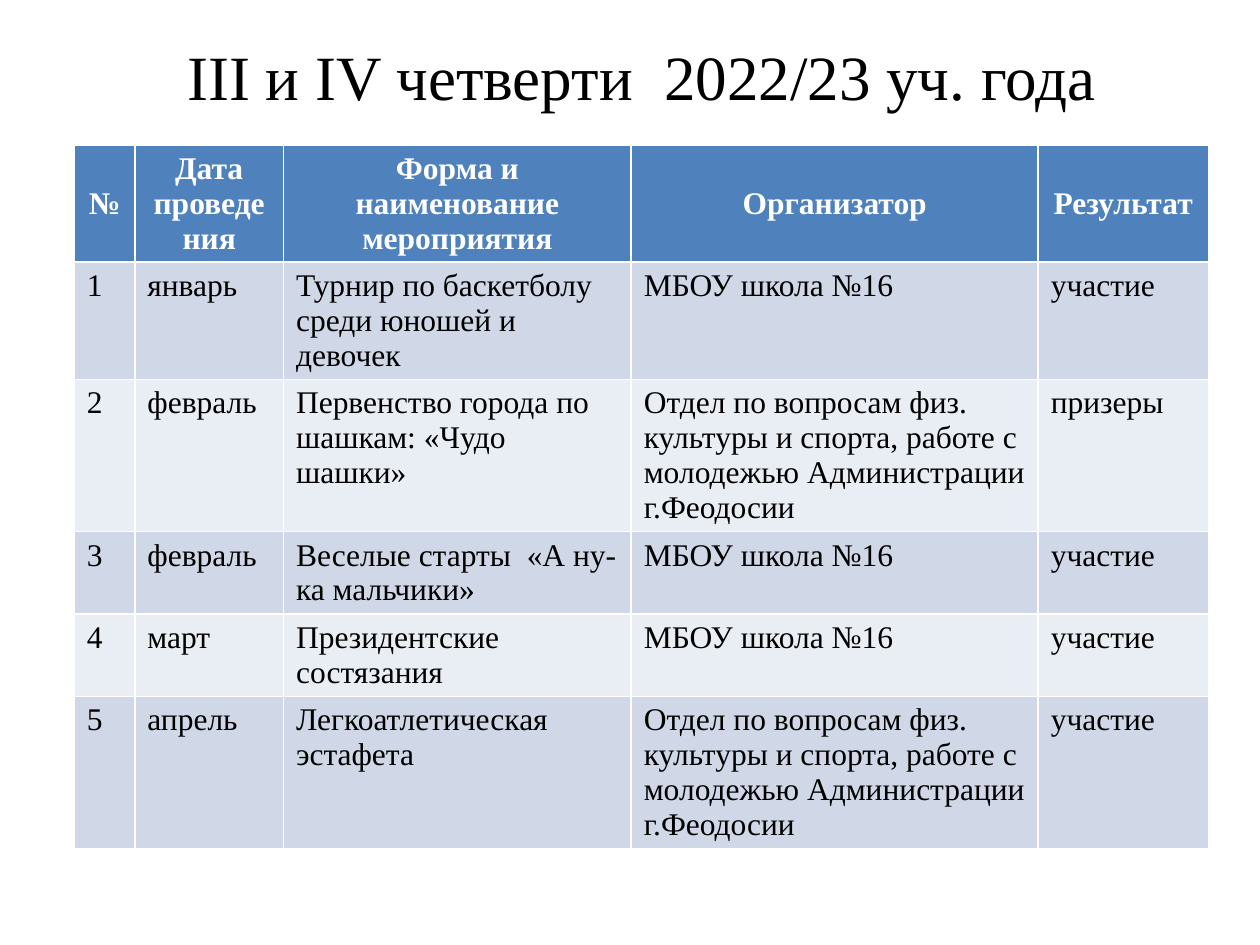
from pptx import Presentation
from pptx.dml.color import RGBColor
from pptx.enum import text
from pptx.util import Inches, Pt

FONT = "Times New Roman"
HUES = {"head": "4F81BD", "odd": "D0D8E8", "even": "E9EDF4",
        "ink": "000000", "light": "FFFFFF"}
COLS = [0.48, 1.18, 2.76, 3.23, 1.35]
ROW = 0.41

SCHOOL = "МБОУ школа №16"
DEPT = ("Отдел по вопросам физ. культуры и спорта, "
        "работе с молодежью Администрации г.Феодосии")
HEAD = ["№", "Дата проведения", "Форма и наименование мероприятия",
        "Организатор", "Результат"]
EVENTS = [
    ("январь", "Турнир по баскетболу среди юношей и девочек", SCHOOL, "участие"),
    ("февраль", "Первенство города по шашкам: «Чудо шашки»", DEPT, "призеры"),
    ("февраль", "Веселые старты  «А ну- ка мальчики»", SCHOOL, "участие"),
    ("март", "Президентские состязания", SCHOOL, "участие"),
    ("апрель", "Легкоатлетическая эстафета", DEPT, "участие"),
]


def color(name):
    return RGBColor.from_string(HUES[name])


def style(par, size, hue, bold=False, align=None):
    par.alignment = align
    for run in par.runs:
        font = run.font
        font.name, font.size, font.bold = FONT, Pt(size), bold
        font.color.rgb = color(hue)


def add_title(slide, left, top, width, height):
    title = slide.shapes.title
    title.left, title.top = Inches(left), Inches(top)
    title.width, title.height = Inches(width), Inches(height)
    frame = title.text_frame
    frame.text = "III и IV четверти  2022/23 уч. года"
    frame.vertical_anchor = text.MSO_ANCHOR.MIDDLE
    style(frame.paragraphs[0], 36, "ink", align=text.PP_ALIGN.CENTER)


def fill_cell(cell, words, head, band):
    cell.text_frame.text = words
    cell.fill.solid()
    cell.fill.fore_color.rgb = color(band)
    par = cell.text_frame.paragraphs[0]
    if head:
        cell.vertical_anchor = text.MSO_ANCHOR.MIDDLE
        style(par, 18, "light", True, text.PP_ALIGN.CENTER)
    else:
        style(par, 18, "ink")


def add_events(slide, left, top):
    """Table of events; the default table style gives the white borders."""
    rows = [HEAD] + [(str(n), *event) for n, event in enumerate(EVENTS, 1)]
    table = slide.shapes.add_table(
        len(rows), len(COLS), Inches(left), Inches(top),
        Inches(sum(COLS)), Inches(ROW * len(rows))).table
    for col, width in zip(table.columns, COLS):
        col.width = Inches(width)
    for r, row in enumerate(rows):
        band = "head" if r == 0 else "odd" if r % 2 else "even"
        for c, words in enumerate(row):
            fill_cell(table.cell(r, c), words, r == 0, band)


def main():
    deck = Presentation()
    deck.slide_width, deck.slide_height = Inches(10), Inches(7.5)
    slide = deck.slides.add_slide(deck.slide_layouts[5])
    add_title(slide, 0.59, 0.21, 9, 0.77)
    add_events(slide, 0.59, 1.15)
    deck.save("out.pptx")


if __name__ == "__main__":
    main()
